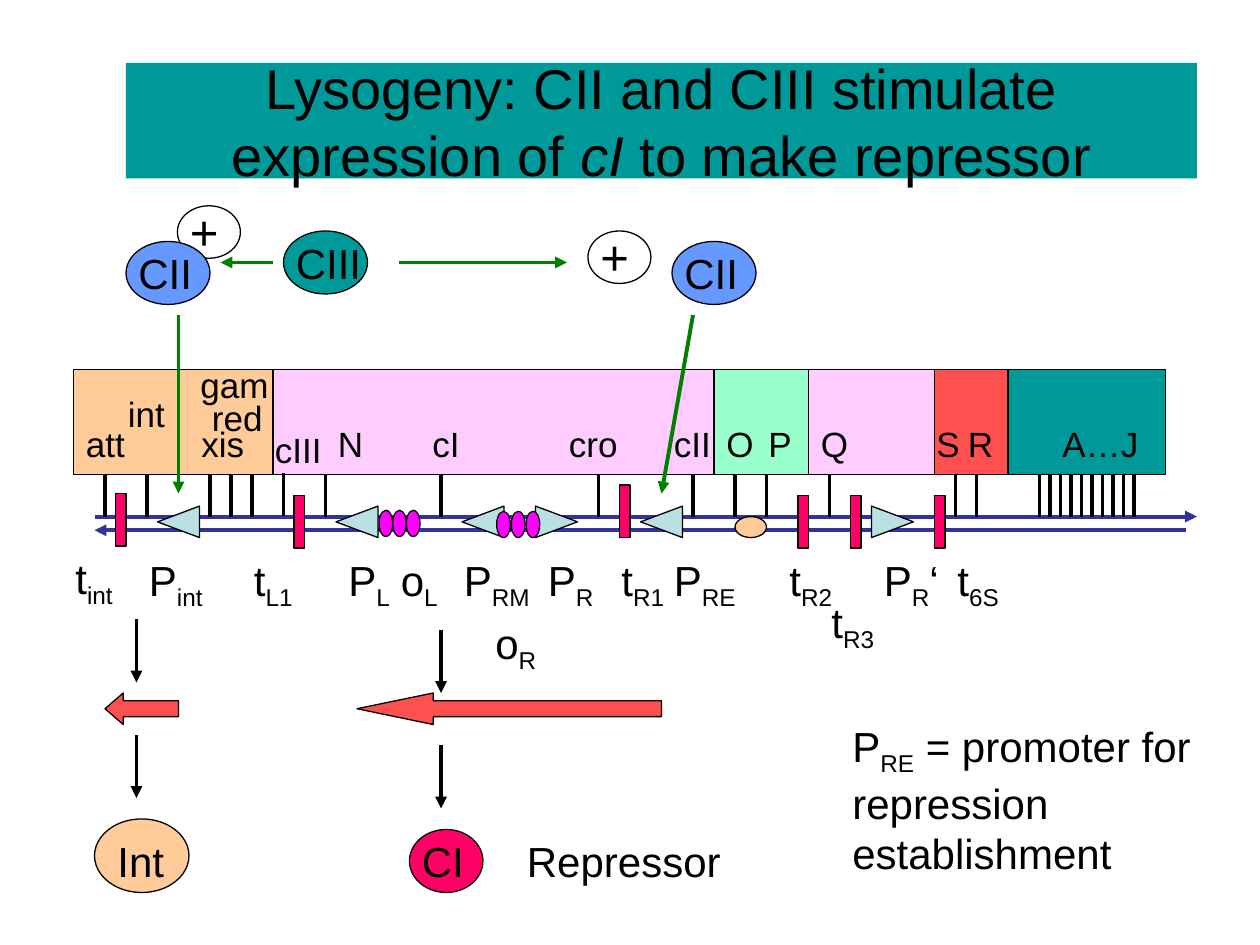
import pptx
import pptx.dml.color
import pptx.enum.shapes
import pptx.enum.text
import pptx.oxml.ns
import pptx.util
from lxml import etree

PX = 7620  # EMU per px, 120 px to the inch
COLORS = {
    "black": "000000", "teal": "009999", "pink": "FFCCFF", "mint": "99FFCC",
    "red": "FF5050", "peach": "FFCC99", "navy": "333399", "pale": "BBE0E3",
    "crimson": "FF0066", "magenta": "FF00FF", "blue": "6699FF", "green": "008000",
}
SHAPE = pptx.enum.shapes.MSO_SHAPE

# left, width, colour
REGIONS = [(260, 420, "pink"), (680, 90, "mint"), (770, 120, "pink"),
           (890, 70, "red"), (960, 150, "teal"), (70, 190, "peach")]
# name, left, top, width
GENES = [("att", 70, 396, 61), ("int", 110, 368, 59), ("xis", 180, 396, 65),
         ("red", 190, 372, 72), ("gam", 179, 340, 89), ("cIII", 250, 402, 72),
         ("N", 310, 396, 48), ("cI", 400, 396, 50), ("cro", 530, 396, 71),
         ("cII", 630, 396, 60), ("O", 680, 396, 50), ("P", 720, 396, 47),
         ("Q", 770, 396, 50), ("S", 880, 396, 47), ("R", 910, 396, 48),
         ("A…J", 1000, 396, 96)]
GENE_TICKS = [100, 140, 200, 220, 240, 310, 420, 570, 660, 700, 730, 790,
              910, 930, *range(990, 1081, 10)]
# left, rotation
PROMOTERS = [(515, 90), (835, 90), (325, 270), (445, 270), (155, 270), (615, 270)]
# left, top
TERMINATORS = [(590, 462), (280, 472), (760, 472), (810, 472), (890, 472), (110, 470)]
# letter, subscript, suffix, left, top, width
SITES = [("P", "int", "", 130, 522, 90), ("o", "L", "", 370, 522, 72),
         ("P", "L", "", 320, 522, 77), ("P", "RM", "", 430, 522, 103),
         ("P", "R", "", 510, 522, 82), ("P", "RE", "", 630, 522, 98),
         ("P", "R", "‘", 830, 522, 79), ("t", "R3", "", 780, 562, 80),
         ("t", "L1", "", 230, 522, 76), ("t", "R1", "", 580, 522, 80),
         ("t", "R2", "", 740, 522, 80), ("t", "6S", "", 900, 522, 79),
         ("o", "R", "", 460, 582, 77), ("t", "int", "", 60, 520, 74)]


def rgb(color):
    return pptx.dml.color.RGBColor.from_string(COLORS[color])


def add_shape(slide, kind, left, top, width, height, fill=None, outlined=True):
    shape = slide.shapes.add_shape(kind, left * PX, top * PX, width * PX, height * PX)
    shape.shadow.inherit = False
    if fill:
        shape.fill.solid()
        shape.fill.fore_color.rgb = rgb(fill)
    else:
        shape.fill.background()
    if outlined:
        shape.line.color.rgb = rgb("black")
        shape.line.width = pptx.util.Pt(0.75)
    else:
        shape.line.fill.background()
    return shape


def add_line(slide, start, end, color="black", arrow=False):
    line = slide.shapes.add_connector(
        pptx.enum.shapes.MSO_CONNECTOR.STRAIGHT, *(v * PX for v in (*start, *end)))
    line.line.color.rgb = rgb(color)
    line.line.width = pptx.util.Pt(2.25)
    if arrow:
        etree.SubElement(line.line._get_or_add_ln(), pptx.oxml.ns.qn("a:tailEnd"),
                         type="triangle")
    etree.SubElement(line._element.spPr, pptx.oxml.ns.qn("a:effectLst"))


def add_runs(paragraph, parts, size):
    """Fill a paragraph from (text, style) parts; style is "", "sub" or "italic"."""
    for text, style in parts:
        run = paragraph.add_run()
        run.text = text
        run.font.name = "Arial"
        run.font.size = pptx.util.Pt(size)
        run.font.color.rgb = rgb("black")
        if style == "italic":
            run.font.italic = True
        elif style == "sub":
            run.font._element.set("baseline", "-25000")


def add_label(slide, left, top, width, height, lines, size=24):
    box = slide.shapes.add_textbox(left * PX, top * PX, width * PX, height * PX)
    frame = box.text_frame
    frame.word_wrap = False
    frame.auto_size = pptx.enum.text.MSO_AUTO_SIZE.SHAPE_TO_FIT_TEXT
    for number, parts in enumerate(lines):
        paragraph = frame.add_paragraph() if number else frame.paragraphs[0]
        add_runs(paragraph, parts, size)


def add_title(slide):
    banner = add_shape(slide, SHAPE.RECTANGLE, 120, 60, 1020, 110, "teal", outlined=False)
    frame = banner.text_frame
    frame.word_wrap = True
    frame.vertical_anchor = pptx.enum.text.MSO_ANCHOR.MIDDLE
    title = frame.paragraphs[0]
    title.alignment = pptx.enum.text.PP_ALIGN.CENTER
    add_runs(title, [("Lysogeny: CII and CIII stimulate expression of ", ""),
                     ("cI", "italic"), (" to make repressor", "")], 32)


def add_plus(slide, left, top):
    add_label(slide, left, top - 10, 52, 68, [[("+", "")]], 28)
    add_shape(slide, SHAPE.OVAL, left, top, 60, 50)


def add_protein(slide, name, oval, fill, label):
    """Oval is left, top, width, height; label is left, top, width."""
    add_shape(slide, SHAPE.OVAL, *oval, fill)
    add_label(slide, *label, 60, [[(name, "")]])


def add_operator(slide, left, top, step):
    for number in range(3):
        add_shape(slide, SHAPE.OVAL, left + number * step, top, 13, 25, "magenta")


def add_transcript(slide, left, width, head):
    arrow = add_shape(slide, SHAPE.LEFT_ARROW, left, 660, width, 30, "red")
    arrow.adjustments[0] = 0.5
    arrow.adjustments[1] = head


def add_gene_map(slide):
    for left, width, fill in REGIONS:
        add_shape(slide, SHAPE.RECTANGLE, left, 352, width, 100, fill)
    add_line(slide, (90, 492), (1140, 492), "navy", arrow=True)
    add_line(slide, (1130, 505), (90, 505), "navy", arrow=True)
    for left, rotation in PROMOTERS:
        promoter = add_shape(slide, SHAPE.ISOSCELES_TRIANGLE, left, 477, 30, 40, "pale")
        promoter.rotation = rotation
    for left, top in TERMINATORS:
        add_shape(slide, SHAPE.RECTANGLE, left, top, 10, 50, "crimson")
    add_operator(slide, 361, 486, 13)
    add_operator(slide, 473, 487, 14)
    add_shape(slide, SHAPE.OVAL, 700, 492, 30, 20, "peach")
    for x in GENE_TICKS:
        add_line(slide, (x, 492), (x, 452))
    add_line(slide, (270, 491), (270, 450))
    for name, left, top, width in GENES:
        add_label(slide, left, top, width, 52, [[(name, "")]], 20)
    for letter, subscript, suffix, left, top, width in SITES:
        parts = [(letter, ""), (subscript, "sub")]
        if suffix:
            parts.append((suffix, ""))
        add_label(slide, left, top, width, 60, [parts])


def add_activators(slide):
    add_plus(slide, 560, 220)
    add_protein(slide, "CIII", (270, 220, 80, 60), "teal", (270, 220, 87))
    for left in (120, 640):
        add_protein(slide, "CII", (left, 230, 80, 60), "blue", (left, 230, 77))
    for start, end in [((380, 250), (540, 250)), ((260, 250), (210, 250)),
                       ((660, 300), (630, 470)), ((170, 300), (170, 470))]:
        add_line(slide, start, end, "green", arrow=True)


def add_products(slide):
    add_transcript(slide, 340, 290, 2.42)
    add_transcript(slide, 100, 70, 0.58)
    for x, top in [(420, 600), (420, 710), (130, 590), (130, 700)]:
        add_line(slide, (x, top), (x, top + 60), arrow=True)
    add_protein(slide, "CI", (390, 790, 70, 60), "crimson", (390, 790, 65))
    add_protein(slide, "Int", (90, 780, 90, 70), "peach", (100, 790, 72))
    add_label(slide, 490, 790, 209, 60, [[("Repressor", "")]])
    add_label(slide, 800, 680, 362, 156,
              [[("P", ""), ("RE", "sub"), (" = promoter for", "")],
               [("repression", "")], [("establishment", "")]])


def main():
    deck = pptx.Presentation()
    deck.slide_width, deck.slide_height = 1200 * PX, 900 * PX
    slide = deck.slides.add_slide(deck.slide_layouts[6])
    add_plus(slide, 169, 196)
    add_title(slide)
    add_gene_map(slide)
    add_activators(slide)
    add_products(slide)
    deck.save("out.pptx")


if __name__ == "__main__":
    main()
